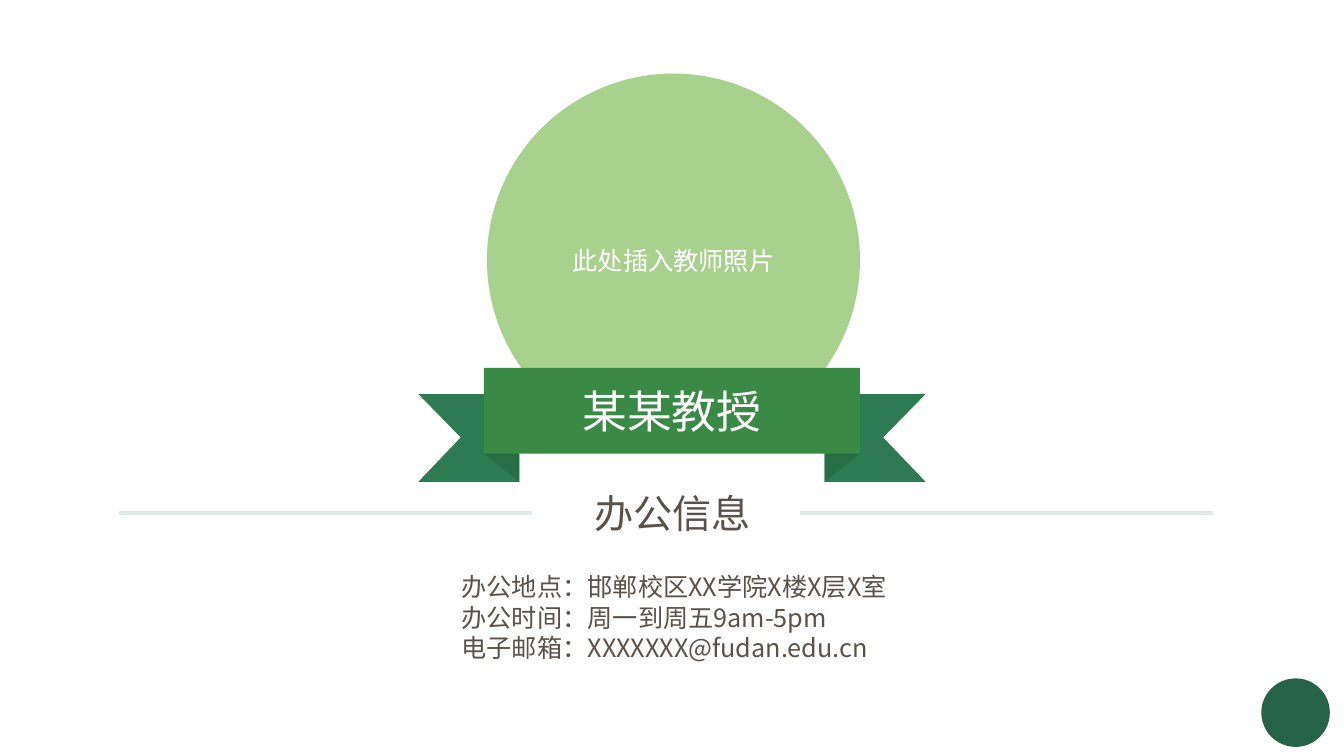
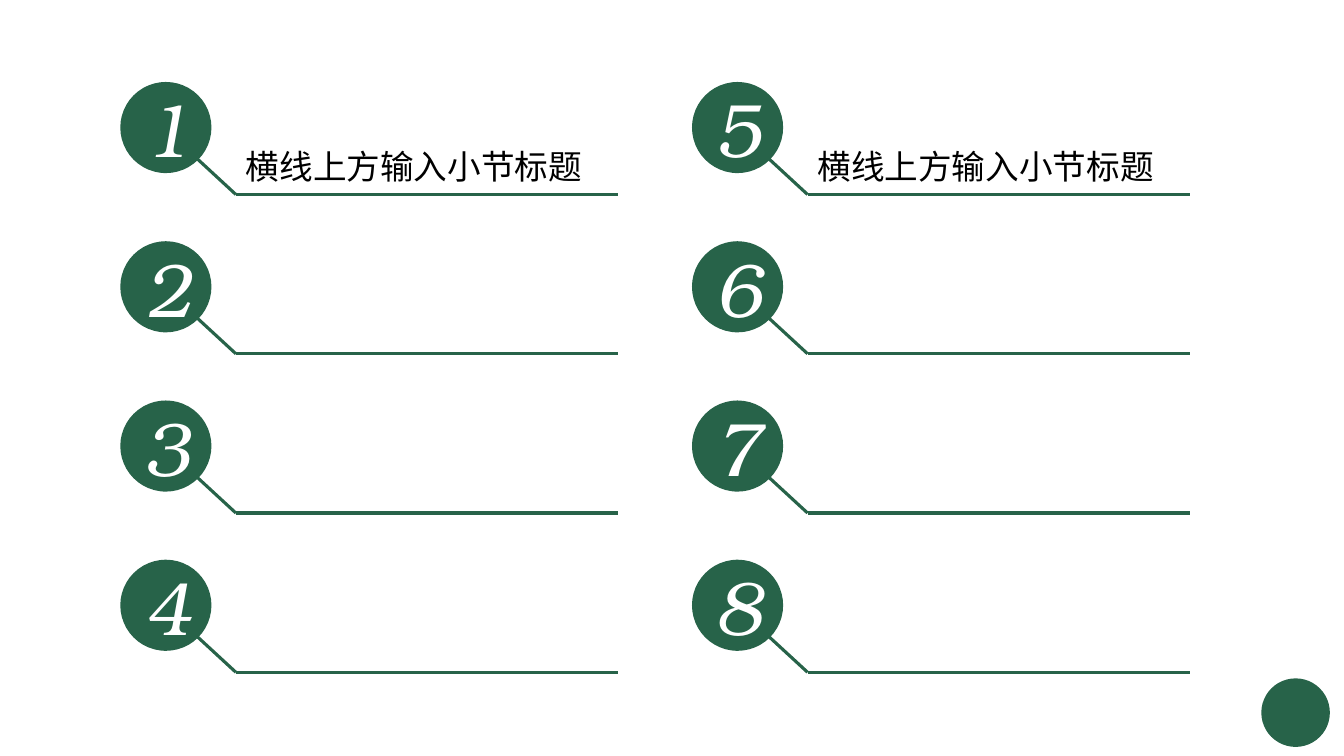
"""Build a teacher contact slide and a numbered contents slide."""
from lxml.etree import SubElement
from pptx import Presentation
from pptx.dml.color import RGBColor
from pptx.enum.shapes import MSO_CONNECTOR, MSO_SHAPE
from pptx.enum.text import MSO_ANCHOR, PP_ALIGN
from pptx.oxml.ns import qn
from pptx.util import Inches, Pt

COLORS = {
    "white": "FFFFFF",
    "black": "000000",
    "brown": "5A514A",
    "rule": "DFE9E6",
    "dark": "276349",
    "photo": "A9D18E",
    "band": "3A8A45",
    "tail": "2D7A53",
    "fold": "266E46",
}
CHINESE = "Noto Sans CJK SC"
WIDTH, HEIGHT = 13.33, 7.5
TITLE_ONLY, BLANK = 5, 6


def rgb(name):
    return RGBColor.from_string(COLORS[name])


def write(shape, text, size=18, color="white", font=CHINESE, italic=False,
          align=PP_ALIGN.CENTER, anchor=MSO_ANCHOR.MIDDLE, leading=None):
    frame = shape.text_frame
    frame.word_wrap = True
    frame.vertical_anchor = anchor
    frame.text = text
    for paragraph in frame.paragraphs:
        paragraph.alignment = align
        if leading:
            paragraph.line_spacing = Pt(leading)
        for run in paragraph.runs:
            run.font.size = Pt(size)
            run.font.name = font
            run.font.italic = italic
            run.font.color.rgb = rgb(color)
            east_asian = SubElement(run.font._element, qn("a:ea"))
            east_asian.set("typeface", CHINESE)


class Deck:
    def __init__(self):
        self.presentation = Presentation()
        self.presentation.slide_width = Inches(WIDTH)
        self.presentation.slide_height = Inches(HEIGHT)
        self.slide = None

    def new_slide(self, layout):
        layouts = self.presentation.slide_layouts
        self.slide = self.presentation.slides.add_slide(layouts[layout])
        self.shape(MSO_SHAPE.OVAL, 12.51, 6.73, 0.68, 0.68, "dark")

    def paint(self, shape, fill):
        shape.shadow.inherit = False
        shape.fill.solid()
        shape.fill.fore_color.rgb = rgb(fill)
        shape.line.fill.background()

    def shape(self, preset, left, top, width, height, fill, text="", **style):
        shape = self.slide.shapes.add_shape(
            preset, Inches(left), Inches(top), Inches(width), Inches(height))
        self.paint(shape, fill)
        if text:
            write(shape, text, **style)
        return shape

    def outline(self, points, fill):
        start, *rest = [(Inches(x), Inches(y)) for x, y in points]
        builder = self.slide.shapes.build_freeform(*start)
        builder.add_line_segments(rest, close=True)
        self.paint(builder.convert_to_shape(), fill)

    def line(self, start, end, color, weight=2.25):
        line = self.slide.shapes.add_connector(
            MSO_CONNECTOR.STRAIGHT, *map(Inches, start + end))
        line.line.color.rgb = rgb(color)
        line.line.width = Pt(weight)
        SubElement(line._element.spPr, qn("a:effectLst"))

    def text(self, left, top, width, height, text, **style):
        box = self.slide.shapes.add_textbox(
            Inches(left), Inches(top), Inches(width), Inches(height))
        write(box, text, **style)

    def title(self, left, top, width, height, text, **style):
        title = self.slide.shapes.title
        title.left, title.top = Inches(left), Inches(top)
        title.width, title.height = Inches(width), Inches(height)
        write(title, text, **style)

    def numbered_heading(self, left, top, number):
        badge = self.shape(MSO_SHAPE.OVAL, left, top, 0.89, 0.89, "dark",
                           str(number), size=54, font="TeX Gyre Bonum",
                           italic=True)
        badge.line.color.rgb = rgb("dark")
        badge.line.width = Pt(1)
        bend = (left + 1.14, top + 1.11)
        self.line((left + 0.75, top + 0.75), bend, "dark")
        self.line(bend, (left + 4.93, top + 1.11), "dark")


def mirrored(points):
    return [(WIDTH - x, y) for x, y in points]


def teacher_slide(deck):
    deck.new_slide(TITLE_ONLY)
    deck.title(5.79, 4.8, 1.76, 0.57, "办公信息", size=28, color="brown")
    deck.shape(MSO_SHAPE.OVAL, 4.83, 0.73, 3.7, 3.7, "photo",
               "此处插入教师照片", font="Calibri")
    tail = [(4.15, 3.91), (5.15, 3.91), (5.15, 4.78), (4.15, 4.78),
            (4.57, 4.34)]
    fold = [(4.8, 4.5), (5.15, 4.5), (5.15, 4.78)]
    rule = [(1.18, 5.09), (5.28, 5.09)]
    for side in (list, mirrored):
        deck.outline(side(tail), "tail")
        deck.outline(side(fold), "fold")
    deck.shape(MSO_SHAPE.RECTANGLE, 4.8, 3.65, 3.73, 0.85, "band",
               "某某教授", size=32)
    for left in (1.18, 7.93):
        deck.line((left, 5.09), (left + 4.1, 5.09), "rule", weight=3)
    details = "\n".join([
        "办公地点：邯郸校区XX学院X楼X层X室",
        "办公时间：周一到周五9am-5pm",
        "电子邮箱：XXXXXXX@fudan.edu.cn",
    ])
    deck.text(4.48, 5.62, 4.7, 1.01, details, color="brown",
              align=PP_ALIGN.LEFT, anchor=MSO_ANCHOR.TOP, leading=21.8)


def contents_slide(deck):
    deck.new_slide(BLANK)
    rows = 4
    for column, left in enumerate((1.2, 6.87)):
        for row in range(rows):
            deck.numbered_heading(left, 0.82 + 1.58 * row,
                                  column * rows + row + 1)
        deck.text(left + 1.14, 1.4, 3.75, 0.5, "横线上方输入小节标题",
                  size=24, color="black", align=PP_ALIGN.LEFT)


def main():
    deck = Deck()
    teacher_slide(deck)
    contents_slide(deck)
    deck.presentation.save("out.pptx")


if __name__ == "__main__":
    main()
